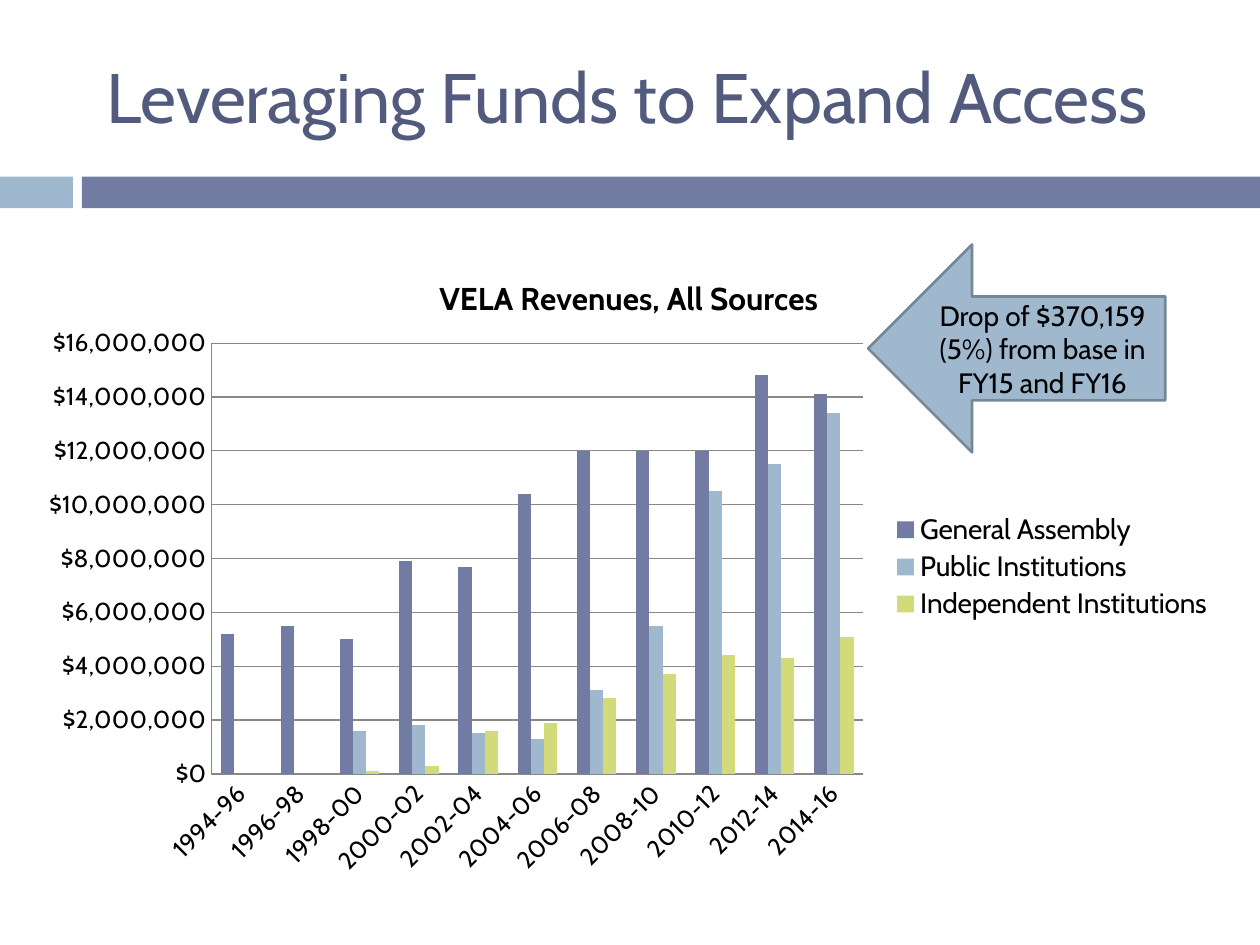
"""Build the slide on leveraging funds, with a revenue chart and a callout arrow."""
from dataclasses import dataclass
from typing import Optional

from lxml.etree import SubElement
from pptx import Presentation
from pptx.chart.data import CategoryChartData
from pptx.dml.color import RGBColor
from pptx.enum.chart import XL_CHART_TYPE as ChartType
from pptx.enum.chart import XL_LEGEND_POSITION as LegendPosition
from pptx.enum.chart import XL_TICK_MARK as TickMark
from pptx.enum.shapes import MSO_SHAPE as Preset
from pptx.enum.text import MSO_ANCHOR as Anchor
from pptx.enum.text import PP_ALIGN as Align
from pptx.oxml.ns import qn
from pptx.util import Cm, Pt

FONT = "Cabin"
INDIGO, SKY, LIME = "727CA3", "9FB8CD", "D2DA7A"
BLACK, GRAY = "000000", "888888"


@dataclass
class Box:
    left: float
    top: float
    width: float
    height: float

    def lengths(self) -> list:
        return [Cm(value) for value in (self.left, self.top, self.width, self.height)]


@dataclass
class Block:
    preset: Preset
    box: Box
    color: str
    outline: Optional[str] = None


@dataclass
class Source:
    name: str
    color: str
    millions: list


BANDS = [
    Block(Preset.RECTANGLE, Box(0, 3.56, 1.47, 0.64), SKY),
    Block(Preset.RECTANGLE, Box(1.65, 3.56, 23.75, 0.64), INDIGO),
]
CALLOUT = Block(Preset.LEFT_ARROW, Box(17.5, 4.93, 5.99, 4.19), SKY, "768898")
SOURCES = [
    Source("General Assembly", INDIGO,
           [5.2, 5.5, 5, 7.9, 7.7, 10.4, 12, 12, 12, 14.8, 14.1]),
    Source("Public Institutions", SKY,
           [None, None, 1.6, 1.8, 1.5, 1.3, 3.1, 5.5, 10.5, 11.5, 13.4]),
    Source("Independent Institutions", LIME,
           [None, None, 0.1, 0.3, 1.6, 1.9, 2.8, 3.7, 4.4, 4.3, 5.1]),
]
BIENNIA = [f"{year}-{(year + 2) % 100:02d}" for year in range(1994, 2015, 2)]


def rgb(color: str) -> RGBColor:
    return RGBColor.from_string(color)


def style_font(font, size: float, color: str = BLACK, bold: bool = False) -> None:
    for attribute, value in {"name": FONT, "size": Pt(size), "bold": bold}.items():
        setattr(font, attribute, value)
    font.color.rgb = rgb(color)


def draw_block(slide, block: Block):
    shape = slide.shapes.add_shape(block.preset, *block.box.lengths())
    shape.shadow.inherit = False
    shape.fill.solid()
    shape.fill.fore_color.rgb = rgb(block.color)
    if block.outline:
        shape.line.color.rgb = rgb(block.outline)
        shape.line.width = Pt(1.5)
    else:
        shape.line.fill.background()
    return shape


def write(shape, text: str, size: float, color: str, align: Align) -> None:
    frame = shape.text_frame
    frame.word_wrap = True
    frame.vertical_anchor = Anchor.MIDDLE
    paragraph = frame.paragraphs[0]
    paragraph.alignment = align
    run = paragraph.add_run()
    run.text = text
    style_font(run.font, size, color)


def place(part, index: int, **fractions: float) -> None:
    """Fix a chart part at fractions of the chart's size."""
    for old in part.findall(qn("c:layout")):
        part.remove(old)
    layout = SubElement(part, qn("c:layout"))
    part.insert(index, layout)
    manual = SubElement(layout, qn("c:manualLayout"))
    settings = {"xMode": "edge", "yMode": "edge", **fractions}
    if part.tag == qn("c:plotArea"):
        settings = {"layoutTarget": "inner", **settings}
    for name, value in settings.items():
        SubElement(manual, qn(f"c:{name}")).set("val", str(value))


def style_axis(axis) -> None:
    ticks = {"major_tick_mark": TickMark.NONE, "minor_tick_mark": TickMark.NONE}
    for attribute, value in ticks.items():
        setattr(axis, attribute, value)
    style_font(axis.tick_labels.font, 14)
    axis.format.line.color.rgb = rgb(GRAY)


def draw_revenues(slide, box: Box) -> None:
    figures = CategoryChartData(number_format='"$"#,##0')
    figures.categories = BIENNIA
    for source in SOURCES:
        figures.add_series(source.name, [
            None if amount is None else round(amount * 1_000_000)
            for amount in source.millions])
    chart = slide.shapes.add_chart(
        ChartType.COLUMN_CLUSTERED, *box.lengths(), figures).chart
    style_font(chart.font, 10)

    heading = chart.chart_title.text_frame.paragraphs[0].add_run()
    heading.text = "VELA Revenues, All Sources"
    style_font(heading.font, 18, bold=True)

    chart.has_legend = True
    legend = chart.legend
    legend.position = LegendPosition.RIGHT
    legend.include_in_layout = False
    style_font(legend.font, 16)

    dollars = chart.value_axis
    for axis in (chart.category_axis, dollars):
        style_axis(axis)
    scale = {"minimum_scale": 0, "maximum_scale": 16_000_000,
             "major_unit": 2_000_000, "has_major_gridlines": True}
    for attribute, value in scale.items():
        setattr(dollars, attribute, value)
    dollars.major_gridlines.format.line.color.rgb = rgb(GRAY)
    dollars.tick_labels.number_format = '"$"#,##0'
    dollars.tick_labels.number_format_is_linked = False

    plot = chart.plots[0]
    for attribute, value in {"gap_width": 150, "overlap": 0, "vary_by_categories": False}.items():
        setattr(plot, attribute, value)
    for series, source in zip(plot.series, SOURCES):
        series.invert_if_negative = False
        series.format.fill.solid()
        series.format.fill.fore_color.rgb = rgb(source.color)

    root = chart.element.find(qn("c:chart"))
    for label_body in root.xpath("c:plotArea/c:catAx/c:txPr/a:bodyPr"):
        label_body.set("rot", "-2700000")
    place(root.find(qn("c:title")), 1, x=0.34, y=0.04)
    place(root.find(qn("c:plotArea")), 0, x=0.155, y=0.153, w=0.543, h=0.668)
    place(root.find(qn("c:legend")), 1, x=0.72, y=0.41, w=0.27, h=0.18)


def main() -> None:
    deck = Presentation()
    deck.slide_width, deck.slide_height = Cm(25.4), Cm(19.05)
    slide = deck.slides.add_slide(deck.slide_layouts[6])
    for band in BANDS:
        draw_block(slide, band)
    draw_revenues(slide, Box(0.51, 4.93, 24.21, 13))
    title = slide.shapes.add_textbox(*Box(1.9, 0.43, 22.71, 3).lengths())
    write(title, "Leveraging Funds to Expand Access", 40, "525B7E", Align.LEFT)
    callout = draw_block(slide, CALLOUT)
    write(callout, "Drop of $370,159 (5%) from base in FY15 and FY16",
          16, BLACK, Align.CENTER)
    deck.save("out.pptx")


if __name__ == "__main__":
    main()
